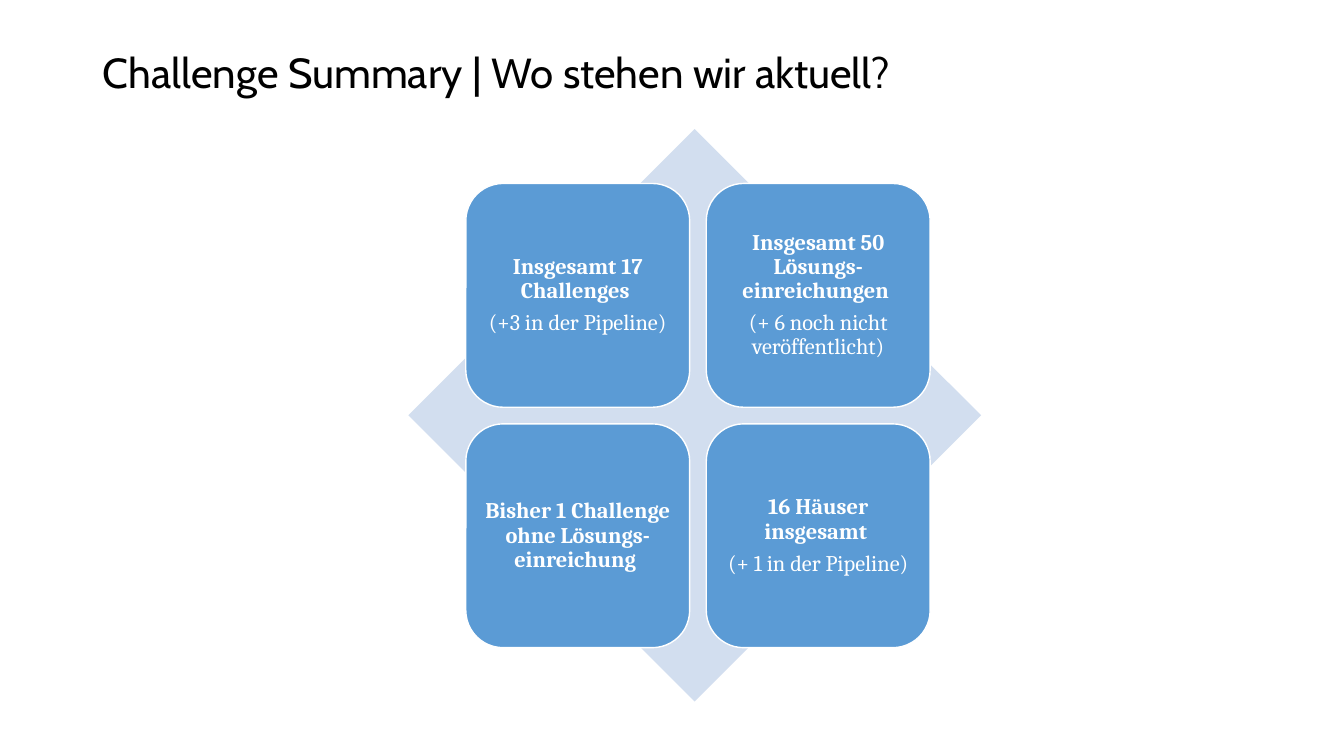
from dataclasses import dataclass
from itertools import product

from pptx import Presentation
from pptx.dml.color import RGBColor as RGB
from pptx.enum.shapes import MSO_SHAPE as Shape
from pptx.enum.text import MSO_ANCHOR as Anchor, PP_ALIGN as Align
from pptx.util import Inches, Pt


@dataclass(frozen=True)
class Theme:
    ink: RGB = RGB(0x00, 0x00, 0x00)
    white: RGB = RGB(0xFF, 0xFF, 0xFF)
    tile: RGB = RGB(0x5B, 0x9B, 0xD5)
    back: RGB = RGB(0xD2, 0xDE, 0xEF)
    head: str = "Cabin"
    body: str = "Cambria"
    big: Pt = Pt(30)
    text: Pt = Pt(16)
    gap: Pt = Pt(5.6)
    edge: Pt = Pt(1)


def assign(item, values):
    for name, value in values.items():
        setattr(item, name, value)


class Page:
    def __init__(self, deck, theme):
        self.theme = theme
        self.slide = deck.slides.add_slide(deck.slide_layouts[5])

    def title(self, text, box):
        look = self.theme
        shape = self.slide.shapes.title
        assign(shape, dict(zip(("left", "top", "width", "height"), map(Inches, box))))
        frame = shape.text_frame
        assign(frame, {"text": text, "word_wrap": True, "vertical_anchor": Anchor.MIDDLE})
        line = frame.paragraphs[0]
        assign(line, {"alignment": Align.LEFT, "line_spacing": 0.9})
        assign(line.font, {"name": look.head, "size": look.big})
        line.font.color.rgb = look.ink

    def block(self, kind, box, fill):
        shape = self.slide.shapes.add_shape(kind, *map(Inches, box))
        shape.shadow.inherit = False
        shape.fill.solid()
        shape.fill.fore_color.rgb = fill
        shape.line.fill.background()
        return shape

    def tile(self, box, lines):
        """Draw a rounded tile whose first line is bold."""
        look = self.theme
        shape = self.block(Shape.ROUNDED_RECTANGLE, box, look.tile)
        shape.line.color.rgb = look.white
        shape.line.width = look.edge
        frame = shape.text_frame
        assign(frame, {"word_wrap": True, "vertical_anchor": Anchor.MIDDLE})
        for side in ("left", "top", "right", "bottom"):
            setattr(frame, f"margin_{side}", Inches(0.07))
        for row, text in enumerate(lines):
            para = frame.add_paragraph() if row else frame.paragraphs[0]
            assign(para, {"text": text, "alignment": Align.CENTER,
                          "line_spacing": 0.9, "space_after": look.gap})
            assign(para.font, {"name": look.body, "size": look.text, "bold": row == 0})
            para.font.color.rgb = look.white


FACTS = (
    ("Insgesamt 17 Challenges ", "(+3 in der Pipeline)"),
    ("Insgesamt 50 Lösungs-einreichungen ", "(+ 6 noch nicht veröffentlicht)"),
    ("Bisher 1 Challenge ohne Lösungs-einreichung ",),
    ("16 Häuser insgesamt ", "(+ 1 in der Pipeline)"),
)


def main():
    deck = Presentation()
    assign(deck, {"slide_width": Inches(13.33), "slide_height": Inches(7.5)})
    theme = Theme()
    page = Page(deck, theme)
    page.title("Challenge Summary | Wo stehen wir aktuell?", (0.92, 0.02, 11.5, 1.45))
    page.block(Shape.DIAMOND, (4.05, 1.28, 5.68, 5.68), theme.back)
    left, top, side, step = 4.62, 1.82, 2.22, 2.385
    for (row, col), lines in zip(product(range(2), repeat=2), FACTS):
        page.tile((left + col * step, top + row * step, side, side), lines)
    deck.save("out.pptx")


if __name__ == "__main__":
    main()
